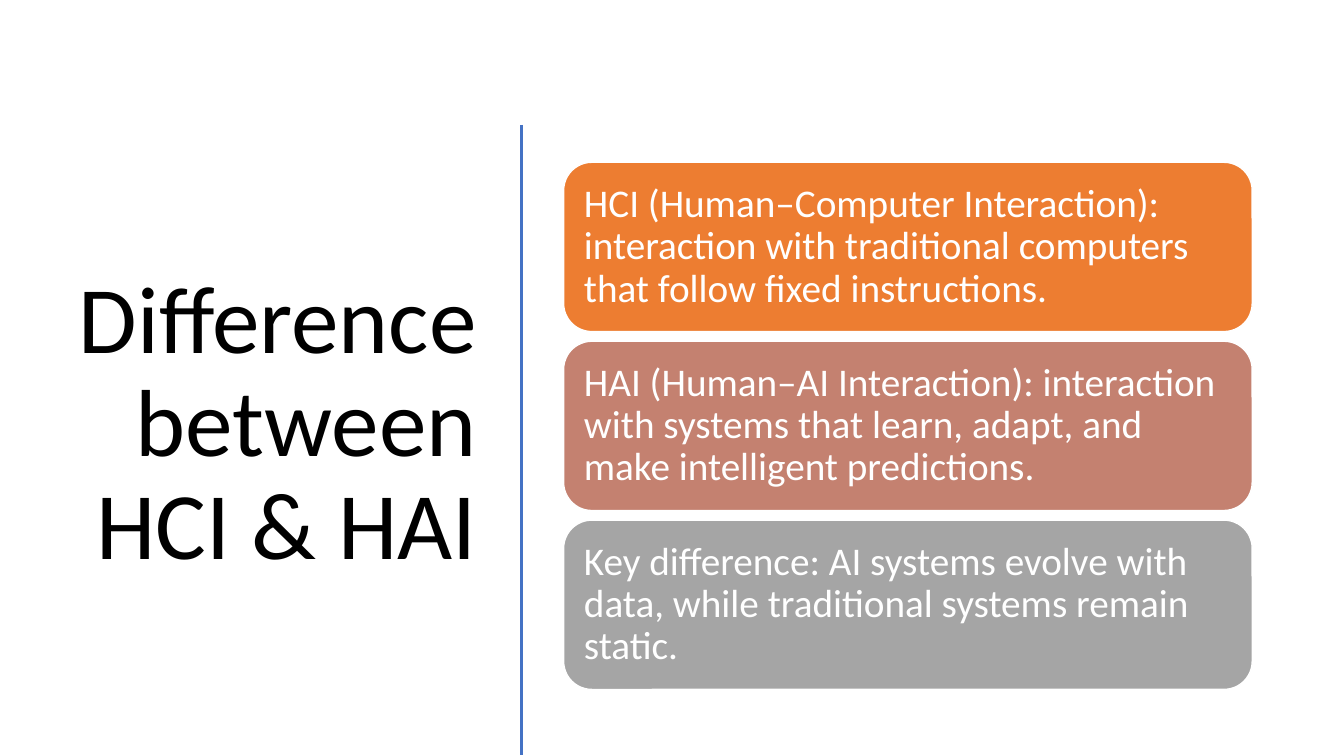
from dataclasses import dataclass

from lxml import etree
from pptx import Presentation
from pptx.dml.color import RGBColor
from pptx.enum.shapes import MSO_CONNECTOR, MSO_SHAPE
from pptx.enum.text import MSO_ANCHOR, MSO_AUTO_SIZE, PP_ALIGN
from pptx.oxml.ns import qn
from pptx.slide import Slide
from pptx.text.text import TextFrame
from pptx.util import Inches, Pt

STRAIGHT = MSO_CONNECTOR.STRAIGHT
ROUNDED = MSO_SHAPE.ROUNDED_RECTANGLE
MIDDLE = MSO_ANCHOR.MIDDLE
NO_FIT = MSO_AUTO_SIZE.NONE
LEFT, RIGHT = PP_ALIGN.LEFT, PP_ALIGN.RIGHT

FONT = "Calibri"
COLORS = {
    "title": "000000",
    "white": "FFFFFF",
    "divider": "4472C4",
    "orange": "ED7D31",
    "rose": "C48170",
    "gray": "A5A5A5",
}

SLIDE_WIDTH, SLIDE_HEIGHT = 13.33, 7.5
DIVIDER_X, DIVIDER_TOP, DIVIDER_BOTTOM = 5.17, 1.24, 7.49

# The cards form one column of equal rows.
CARD_LEFT, CARD_TOP = 5.59, 1.61
CARD_WIDTH, CARD_HEIGHT = 6.83, 1.68
CARD_GAP = 0.095
CARD_INSET = 0.12


@dataclass(frozen=True)
class Card:
    text: str
    color: str


CARDS = [
    Card("HCI (Human–Computer Interaction): interaction with traditional "
         "computers that follow fixed instructions.", "orange"),
    Card("HAI (Human–AI Interaction): interaction with systems that learn, "
         "adapt, and make intelligent predictions.", "rose"),
    Card("Key difference: AI systems evolve with data, while traditional "
         "systems remain static.", "gray"),
]


def rgb(name: str) -> RGBColor:
    return RGBColor.from_string(COLORS[name])


def write_text(frame: TextFrame, text: str, size: int, color: str,
               alignment: PP_ALIGN) -> None:
    frame.word_wrap = True
    frame.auto_size = NO_FIT
    frame.vertical_anchor = MIDDLE
    paragraph = frame.paragraphs[0]
    paragraph.alignment = alignment
    paragraph.line_spacing = 0.9
    run = paragraph.add_run()
    run.text = text
    run.font.name = FONT
    run.font.size = Pt(size)
    run.font.color.rgb = rgb(color)


def add_title(slide: Slide) -> None:
    title = slide.shapes.title
    title.left, title.top = Inches(0.52), Inches(1.17)
    title.width, title.height = Inches(4.31), Inches(6.11)
    write_text(title.text_frame, "Difference between HCI & HAI", 68, "title", RIGHT)


def add_divider(slide: Slide) -> None:
    divider = slide.shapes.add_connector(
        STRAIGHT, Inches(DIVIDER_X), Inches(DIVIDER_TOP),
        Inches(DIVIDER_X), Inches(DIVIDER_BOTTOM))
    divider.line.color.rgb = rgb("divider")
    divider.line.width = Pt(2)
    etree.SubElement(divider._element.spPr, qn("a:effectLst"))


def add_card(slide: Slide, card: Card, row: int) -> None:
    top = CARD_TOP + row * (CARD_HEIGHT + CARD_GAP)
    shape = slide.shapes.add_shape(
        ROUNDED, Inches(CARD_LEFT), Inches(top),
        Inches(CARD_WIDTH), Inches(CARD_HEIGHT))
    shape.shadow.inherit = False
    shape.fill.solid()
    shape.fill.fore_color.rgb = rgb(card.color)
    shape.line.color.rgb = rgb("white")
    shape.line.width = Pt(1)
    frame = shape.text_frame
    frame.margin_left = frame.margin_right = Inches(CARD_INSET)
    frame.margin_top = frame.margin_bottom = Inches(CARD_INSET)
    write_text(frame, card.text, 28, "white", LEFT)


def main() -> None:
    presentation = Presentation()
    presentation.slide_width = Inches(SLIDE_WIDTH)
    presentation.slide_height = Inches(SLIDE_HEIGHT)
    title_only = presentation.slide_layouts.get_by_name("Title Only")
    slide = presentation.slides.add_slide(title_only)
    add_title(slide)
    add_divider(slide)
    for row, card in enumerate(CARDS):
        add_card(slide, card, row)
    presentation.save("out.pptx")


if __name__ == "__main__":
    main()
